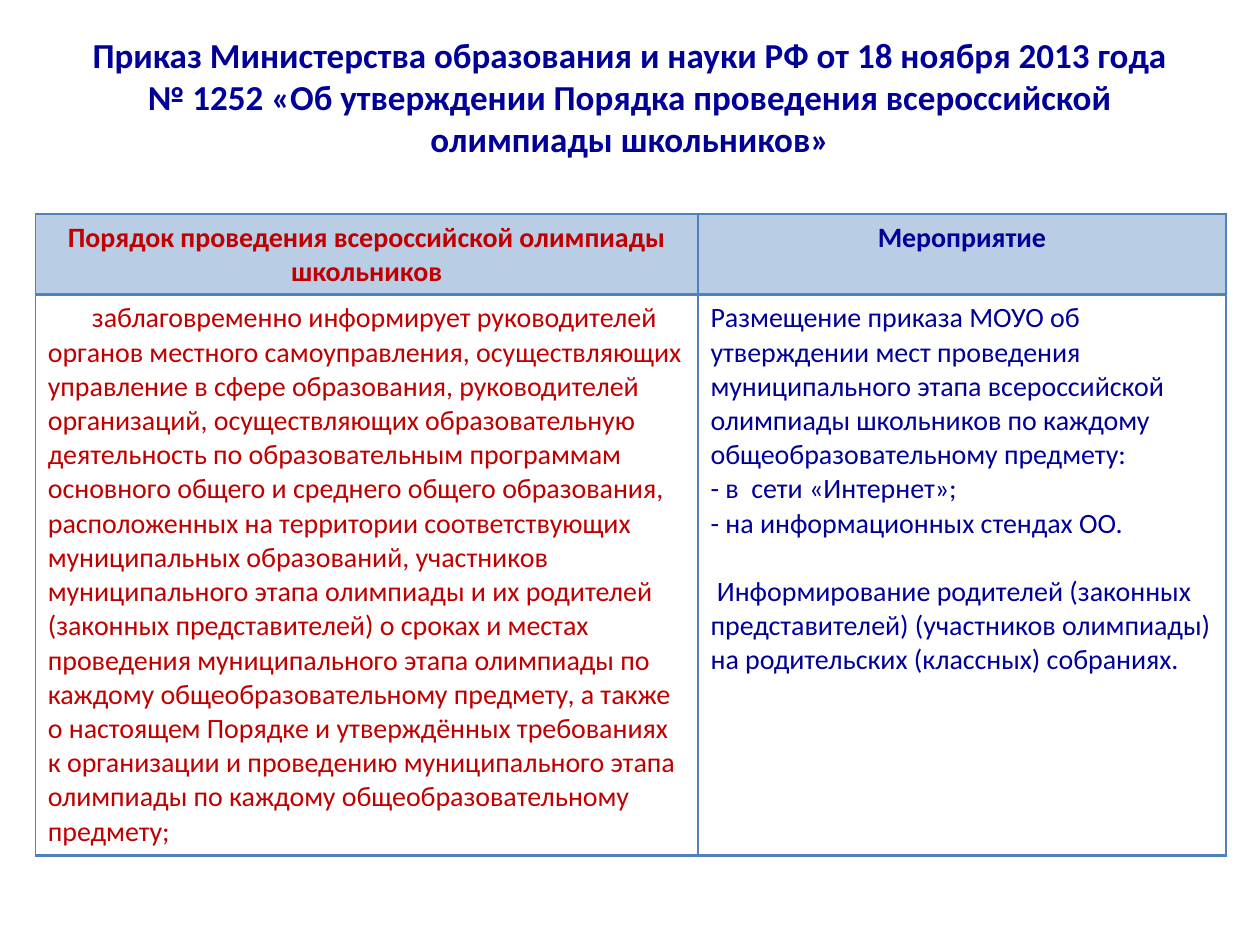
import pptx
import pptx.dml.color
import pptx.enum.text
import pptx.oxml
import pptx.oxml.ns
import pptx.util

RGB = pptx.dml.color.RGBColor
NAVY = RGB(0x00, 0x00, 0x99)
RED = RGB(0xC0, 0x00, 0x00)
PALE = RGB(0xB9, 0xCD, 0xE5)
WHITE = RGB(0xFF, 0xFF, 0xFF)
EDGE = RGB(0x4F, 0x81, 0xBD)
ALIGN = pptx.enum.text.PP_ALIGN
ANCHOR = pptx.enum.text.MSO_ANCHOR
Inches = pptx.util.Inches
Pt = pptx.util.Pt


def style(para, size, color, bold, align):
    para.alignment = align
    for run in para.runs:
        font = run.font
        font.name = "Calibri"
        font.size = Pt(size)
        font.bold = bold
        font.color.rgb = color


def border(cell, widths):
    """Draw the left, right, top and bottom edges, widths in points."""
    props = cell._tc.get_or_add_tcPr()
    for spot, (side, width) in enumerate(zip("LRTB", widths)):
        line = pptx.oxml.parse_xml(
            f'<a:ln{side} {pptx.oxml.ns.nsdecls("a")} w="{Pt(width)}">'
            f'<a:solidFill><a:srgbClr val="{EDGE}"/></a:solidFill></a:ln{side}>')
        props.insert(spot, line)


deck = pptx.Presentation()
deck.slide_width = Inches(10)
deck.slide_height = Inches(7.5)
W, H = deck.slide_width, deck.slide_height
slide = deck.slides.add_slide(deck.slide_layouts[6])

# Title
box = slide.shapes.add_textbox(int(W * 0.05), int(H * 0.04), int(W * 0.9), Inches(0.93))
frame = box.text_frame
frame.word_wrap = True
frame.vertical_anchor = ANCHOR.MIDDLE
frame.text = ("Приказ Министерства образования и науки РФ от 18 ноября 2013 года "
              "№ 1252 «Об утверждении Порядка проведения всероссийской "
              "олимпиады школьников»")
style(frame.paragraphs[0], 20, NAVY, True, ALIGN.CENTER)

# Table: one heading row, one body row
heads = ["Порядок проведения всероссийской олимпиады школьников", "Мероприятие"]
duty = ("заблаговременно информирует руководителей органов местного самоуправления, "
        "осуществляющих управление в сфере образования, руководителей организаций, "
        "осуществляющих образовательную деятельность по образовательным программам "
        "основного общего и среднего общего образования, расположенных на территории "
        "соответствующих муниципальных образований, участников муниципального этапа "
        "олимпиады и их родителей (законных представителей) о сроках и местах "
        "проведения муниципального этапа олимпиады по каждому общеобразовательному "
        "предмету, а также о настоящем Порядке и утверждённых требованиях к "
        "организации и проведению муниципального этапа олимпиады по каждому "
        "общеобразовательному предмету;")
steps = ["Размещение приказа МОУО об утверждении мест проведения муниципального этапа "
         "всероссийской олимпиады школьников по каждому общеобразовательному предмету:",
         "- в  сети «Интернет»;",
         "- на информационных стендах ОО.",
         "Информирование родителей (законных представителей) (участников олимпиады) "
         "на родительских (классных) собраниях."]
rows = [heads, [duty, "\n".join(steps)]]
cols = [5.26, 4.19]
highs = [0.64, 4.45]

grid = slide.shapes.add_table(2, 2, Inches(0.28), Inches(1.7),
                              Inches(sum(cols)), Inches(sum(highs))).table
grid.horz_banding = False
for col, width in zip(grid.columns, cols):
    col.width = Inches(width)
for row, high in zip(grid.rows, highs):
    row.height = Inches(high)

for r, texts in enumerate(rows):
    head = r == 0
    for c, text in enumerate(texts):
        cell = grid.cell(r, c)
        cell.fill.solid()
        cell.fill.fore_color.rgb = PALE if head else WHITE
        border(cell, (1, 1, 1, 2) if head else (1, 1, 2, 2))
        cell.text_frame.text = text
        for para in cell.text_frame.paragraphs:
            style(para, 16, (RED, NAVY)[c], head, ALIGN.CENTER if head else ALIGN.LEFT)

# First-line indents, and a one-line gap before the last step
first = grid.cell(1, 0).text_frame.paragraphs[0]
last = grid.cell(1, 1).text_frame.paragraphs[-1]
last.space_before = Pt(19.5)
for para, indent in ((first, 0.35), (last, 0.05)):
    props = para._p.get_or_add_pPr()
    props.set("marL", "0")
    props.set("indent", str(Inches(indent)))

deck.save("out.pptx")
